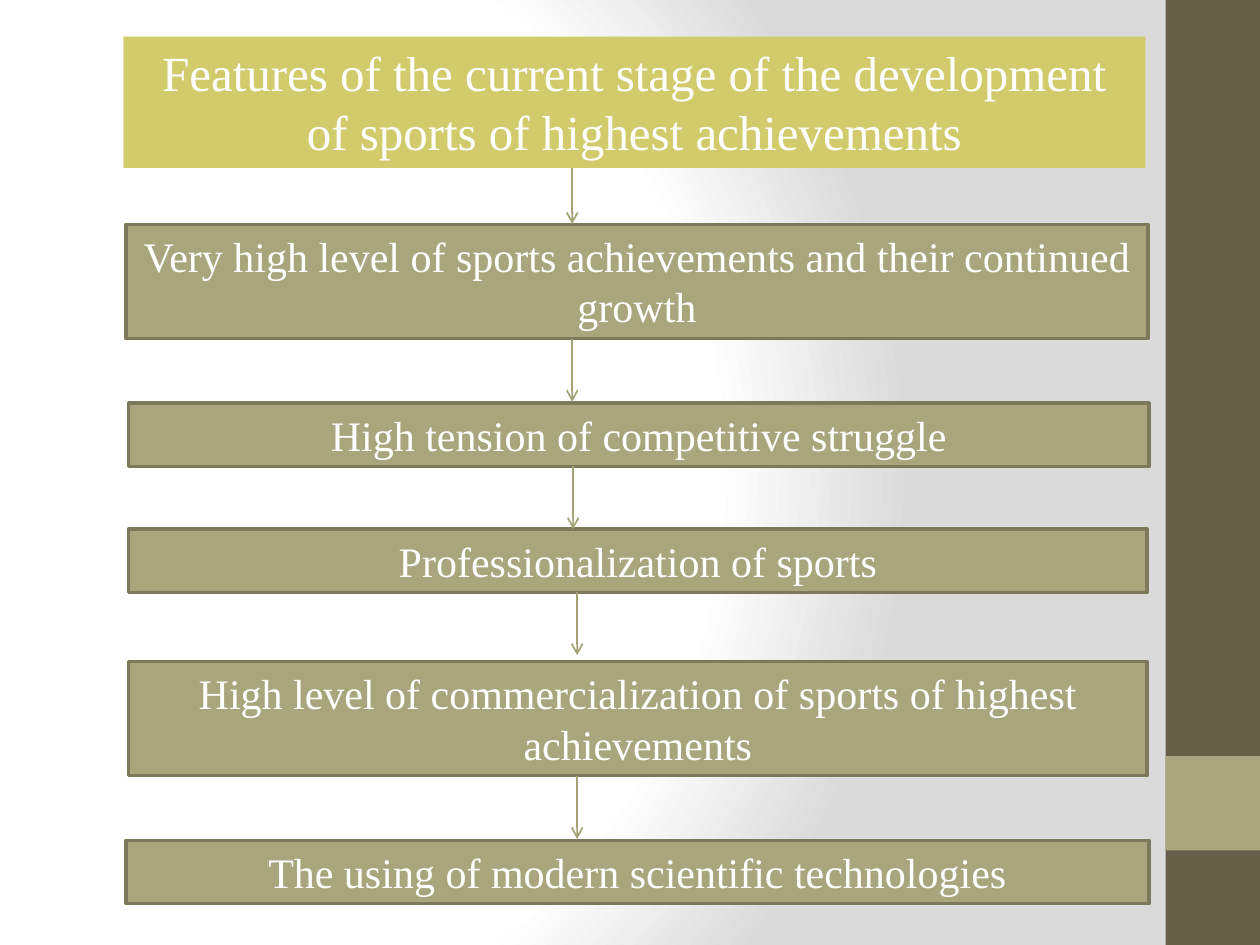
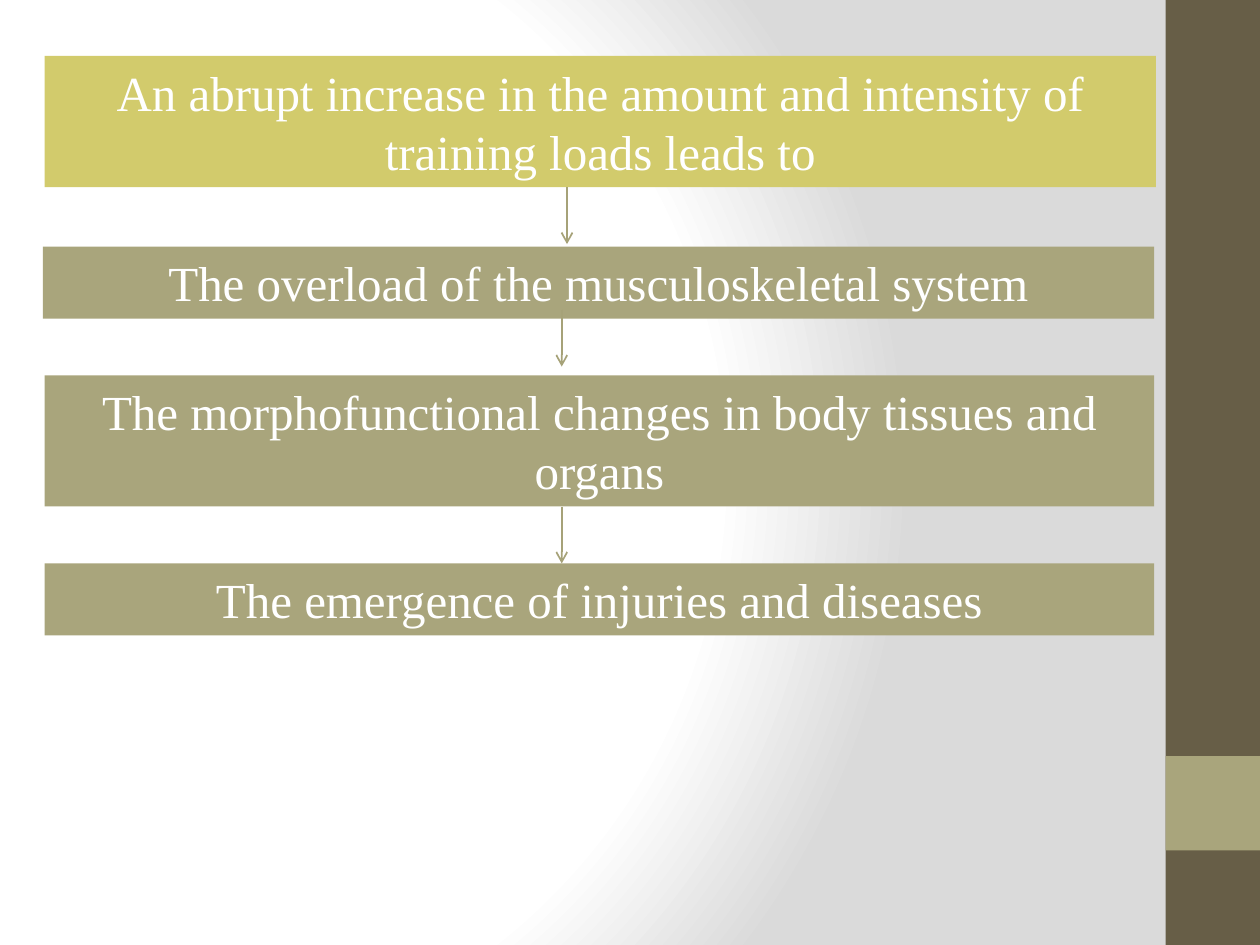
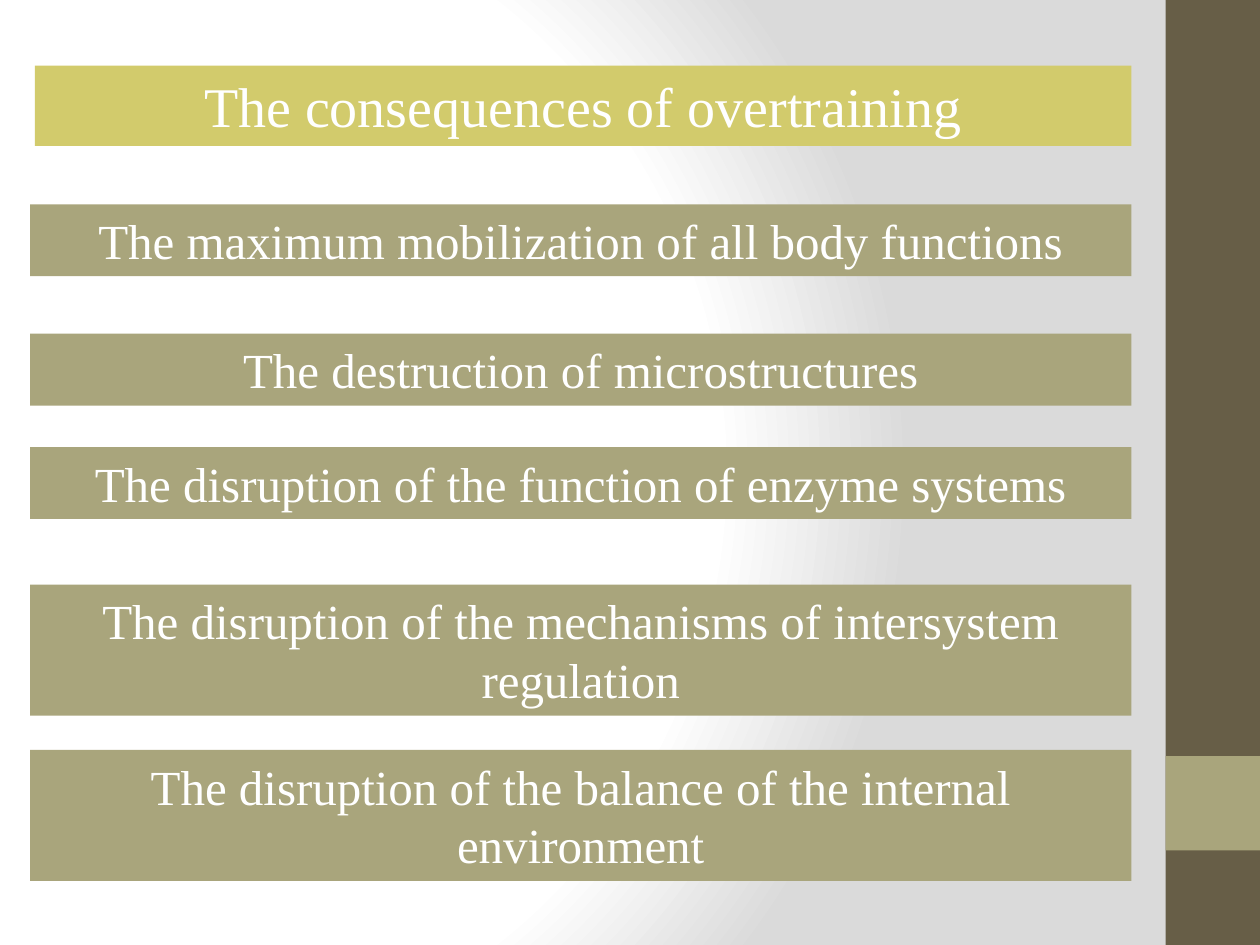
from pptx import Presentation
from pptx.dml.color import RGBColor
from pptx.enum.shapes import MSO_CONNECTOR, MSO_SHAPE
from pptx.enum.text import MSO_ANCHOR, MSO_AUTO_SIZE, PP_ALIGN
from pptx.oxml import parse_xml
from pptx.oxml.ns import nsdecls, qn
from pptx.util import Pt

COLORS = {
    "white": "FFFFFF", "shade": "DADADA", "band": "675E47", "title": "D2CB6C",
    "item": "A9A57C", "border": "7D7A5C", "arrow": "A6A278",
}
FONT = "Times New Roman"
PAGE_W, PAGE_H = 720, 540
BAND_W = 54
LINE_FACTOR, INSETS = 1.21, 7.2
FRAME_FORMAT = {
    "word_wrap": True,
    "auto_size": MSO_AUTO_SIZE.SHAPE_TO_FIT_TEXT,
    "vertical_anchor": MSO_ANCHOR.TOP,
}


def rgb(name):
    """Return the named colour."""
    return RGBColor.from_string(COLORS[name])


def apply(obj, values):
    """Set each attribute in values on obj."""
    for name, value in values.items():
        setattr(obj, name, value)


def add_rect(slide, left, top, width, height, fill, border=None):
    """Add a flat rectangle with an optional border."""
    sp = slide.shapes.add_shape(
        MSO_SHAPE.RECTANGLE, Pt(left), Pt(top), Pt(width), Pt(height))
    sp.shadow.inherit = False
    sp.fill.solid()
    sp.fill.fore_color.rgb = rgb(fill)
    if border:
        sp.line.color.rgb = rgb(border)
        sp.line.width = Pt(2)
    else:
        sp.line.fill.background()
    return sp


def add_label(slide, left, top, width, lines, text, size, fill, border=None):
    """Add a filled box of centred text, as tall as its lines need."""
    height = round(lines * size * LINE_FACTOR + INSETS, 2)
    sp = add_rect(slide, left, top, width, height, fill, border)
    tf = sp.text_frame
    apply(tf, FRAME_FORMAT)
    p = tf.paragraphs[0]
    p.alignment = PP_ALIGN.CENTER
    r = p.add_run()
    r.text = text
    apply(r.font, {"name": FONT, "size": Pt(size)})
    r.font.color.rgb = rgb("white")


def add_arrow(slide, x, top, length):
    """Add a thin arrow pointing down."""
    cn = slide.shapes.add_connector(
        MSO_CONNECTOR.STRAIGHT, Pt(x), Pt(top), Pt(x), Pt(top + length))
    cn.line.color.rgb = rgb("arrow")
    cn.line.width = Pt(1)
    ln = cn.line._get_or_add_ln()
    ln.append(parse_xml(f'<a:tailEnd {nsdecls("a")} type="arrow"/>'))
    ln.getparent().append(parse_xml(f'<a:effectLst {nsdecls("a")}/>'))


def style_master(master, slide):
    """Give the master its gradient and the side band drawn on the slide."""
    master.background.fill.solid()
    bg = master.element.find(".//" + qn("p:bgPr"))
    stops = "".join(
        f'<a:gs pos="{pos * 1000}"><a:srgbClr val="{COLORS[name]}"/></a:gs>'
        for pos, name in ((0, "white"), (75, "white"), (100, "shade")))
    bg.replace(bg[0], parse_xml(
        f'<a:gradFill {nsdecls("a")} rotWithShape="1"><a:gsLst>{stops}</a:gsLst>'
        '<a:path path="circle"><a:fillToRect l="20000" t="50000" r="100000" '
        'b="50000"/></a:path></a:gradFill>'))
    left = PAGE_W - BAND_W
    for top, height, fill in ((0, PAGE_H, "band"), (432, BAND_W, "item")):
        sp = add_rect(slide, left, top, BAND_W, height, fill)
        master.shapes.element.append(sp.element)


def add_list(slide, box, title, items, size=28, border=None, arrows=()):
    """Place a title, its items and arrows relative to the box."""
    left, top, width = box
    lines, text, title_size = title
    add_label(slide, left, top, width, lines, text, title_size, "title")
    for dx, dy, dw, lines, text in items:
        add_label(slide, left + dx, top + dy, width + dw, lines, text,
                  size, "item", border)
    for dx, dy, length in arrows:
        add_arrow(slide, left + dx, top + dy, length)


SLIDES = [
    {
        "box": (70.5, 21, 584),
        "title": (2, "Features of the current stage of the development of sports "
                     "of highest achievements", 28),
        "items": [
            (1.5, 107.2, 0, 2, "Very high level of sports achievements and their "
                               "continued growth"),
            (3, 209.4, -1, 1, "High tension of competitive struggle"),
            (3, 281.4, -2, 1, "Professionalization of sports"),
            (3, 357, -2, 2, "High level of commercialization of sports of highest "
                            "achievements"),
            (1.5, 459.2, 0.5, 1, "The using of modern scientific technologies"),
        ],
        "size": 24,
        "border": "border",
        "arrows": [(256.5, 75, 32), (256.5, 172.6, 36), (257, 245.4, 36),
                   (259.3, 317.4, 36), (259.3, 422.4, 36)],
    },
    {
        "box": (25.5, 32, 635),
        "title": (2, "An abrupt increase in the amount and intensity of training "
                     "loads leads to", 28),
        "items": [
            (-1, 109, 0, 1, "The overload of the musculoskeletal system"),
            (0, 182.5, -1, 2, "The morphofunctional changes in body tissues and "
                              "organs"),
            (0, 290, -1, 1, "The emergence of injuries and diseases"),
        ],
        "arrows": [(298.5, 75, 32.5), (295.5, 145, 32.5), (295.5, 257.5, 32.5)],
    },
    {
        "box": (20, 37.5, 626.5),
        "title": (1, "The consequences of overtraining", 32),
        "items": [
            (-2.8, 79.3, 2.8, 1, "The maximum mobilization of all body functions"),
            (-2.8, 153.2, 2.8, 1, "The destruction of microstructures"),
            (-2.8, 218, 2.8, 1, "The disruption of the function of enzyme systems"),
            (-2.8, 296.6, 2.8, 2, "The disruption of the mechanisms of intersystem "
                                  "regulation"),
            (-2.8, 391, 2.8, 2, "The disruption of the balance of the internal "
                                "environment"),
        ],
    },
]


def main():
    """Build and save the slides."""
    prs = Presentation()
    apply(prs, {"slide_width": Pt(PAGE_W), "slide_height": Pt(PAGE_H)})
    slides = [prs.slides.add_slide(prs.slide_layouts[6]) for _ in SLIDES]
    style_master(prs.slide_master, slides[0])
    for slide, content in zip(slides, SLIDES):
        add_list(slide, **content)
    prs.save("out.pptx")


if __name__ == "__main__":
    main()
